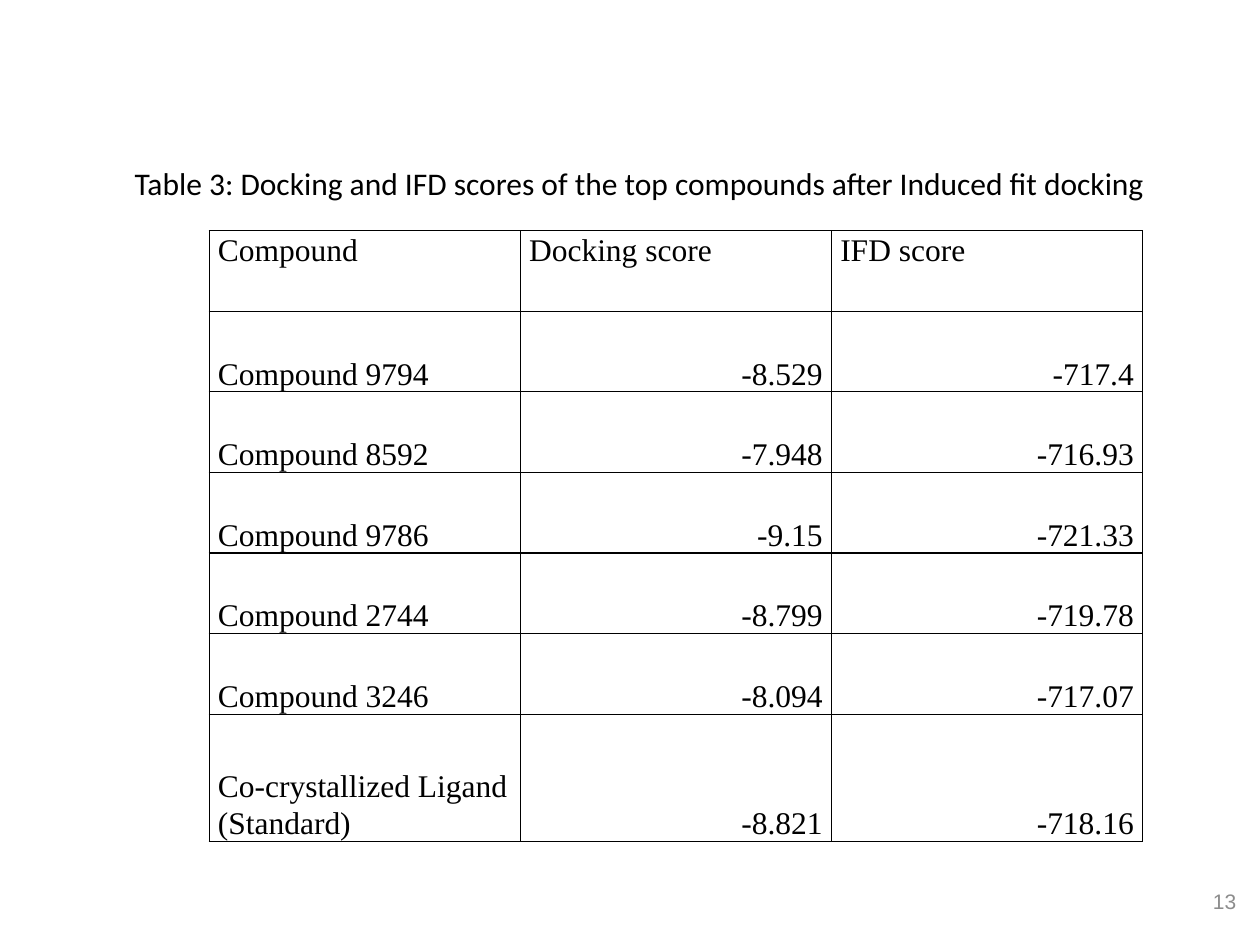
from dataclasses import dataclass

from lxml import etree
from pptx import Presentation
from pptx.dml.color import RGBColor
from pptx.enum.text import MSO_ANCHOR, PP_ALIGN
from pptx.oxml.ns import qn
from pptx.util import Inches, Pt

LEFT, RIGHT = PP_ALIGN.LEFT, PP_ALIGN.RIGHT
TOP, MIDDLE, BOTTOM = MSO_ANCHOR.TOP, MSO_ANCHOR.MIDDLE, MSO_ANCHOR.BOTTOM
COLORS = {"ink": "000000", "page": "8C8C8C"}
SERIF = "Times New Roman"
EDGES = ("a:lnL", "a:lnR", "a:lnT", "a:lnB")
EDGE_WIDTH = Pt(0.75)
WIDTH = 2.47
HEIGHTS = [0.64] * 6 + [1.01]
ROWS = [
    ("Compound", "Docking score", "IFD score"),
    ("Compound 9794", "-8.529", "-717.4"),
    ("Compound 8592", "-7.948", "-716.93"),
    ("Compound 9786", "-9.15", "-721.33"),
    ("Compound 2744", "-8.799", "-719.78"),
    ("Compound 3246", "-8.094", "-717.07"),
    ("Co-crystallized Ligand (Standard)", "-8.821", "-718.16"),
]


@dataclass
class Label:
    text: str
    left: float
    top: float
    width: float
    height: float
    font: str
    size: int
    color: str
    align: PP_ALIGN
    anchor: MSO_ANCHOR


LABELS = [
    Label("13", 7.58, 6.95, 2.33, 0.4, "Arial", 12, "page", RIGHT, MIDDLE),
    Label("Table 3: Docking and IFD scores of the top compounds after Induced fit docking",
          0.97, 1.25, 8.28, 0.41, "Calibri", 18, "ink", LEFT, TOP),
]


def set_text(frame, text: str, font: str, size: int, color: str, align: PP_ALIGN) -> None:
    frame.text = text
    line = frame.paragraphs[0]
    line.alignment = align
    for run in line.runs:
        run.font.name = font
        run.font.size = Pt(size)
        run.font.color.rgb = RGBColor.from_string(COLORS[color])


def add_label(slide, label: Label) -> None:
    box = slide.shapes.add_textbox(Inches(label.left), Inches(label.top),
                                   Inches(label.width), Inches(label.height))
    frame = box.text_frame
    frame.word_wrap = True
    frame.vertical_anchor = label.anchor
    set_text(frame, label.text, label.font, label.size, label.color, label.align)


def add_edges(cell) -> None:
    props = cell._tc.get_or_add_tcPr()
    for tag in EDGES:
        edge = etree.SubElement(props, qn(tag), w=str(EDGE_WIDTH))
        fill = etree.SubElement(edge, qn("a:solidFill"))
        etree.SubElement(fill, qn("a:srgbClr"), val=COLORS["ink"])


def fill_cell(cell, text: str, align: PP_ALIGN, anchor: MSO_ANCHOR) -> None:
    add_edges(cell)
    cell.fill.background()
    cell.margin_left = cell.margin_right = Inches(0.07)
    cell.margin_top = cell.margin_bottom = Inches(0)
    cell.vertical_anchor = anchor
    set_text(cell.text_frame, text, SERIF, 18, "ink", align)
    cell.text_frame.paragraphs[0].line_spacing = 1.07


def add_scores(slide) -> None:
    count = len(ROWS[0])
    table = slide.shapes.add_table(len(ROWS), count, Inches(1.66), Inches(1.83),
                                   Inches(WIDTH * count), Inches(sum(HEIGHTS))).table
    table.first_row = table.horz_banding = False
    for col in table.columns:
        col.width = Inches(WIDTH)
    for r, (height, row) in enumerate(zip(HEIGHTS, ROWS)):
        table.rows[r].height = Inches(height)
        for c, text in enumerate(row):
            align = RIGHT if r and c else LEFT
            fill_cell(table.cell(r, c), text, align, BOTTOM if r else TOP)


def main() -> None:
    deck = Presentation()
    deck.slide_width, deck.slide_height = Inches(10), Inches(7.5)
    slide = deck.slides.add_slide(deck.slide_layouts[6])
    add_scores(slide)
    for label in LABELS:
        add_label(slide, label)
    deck.save("out.pptx")


if __name__ == "__main__":
    main()
